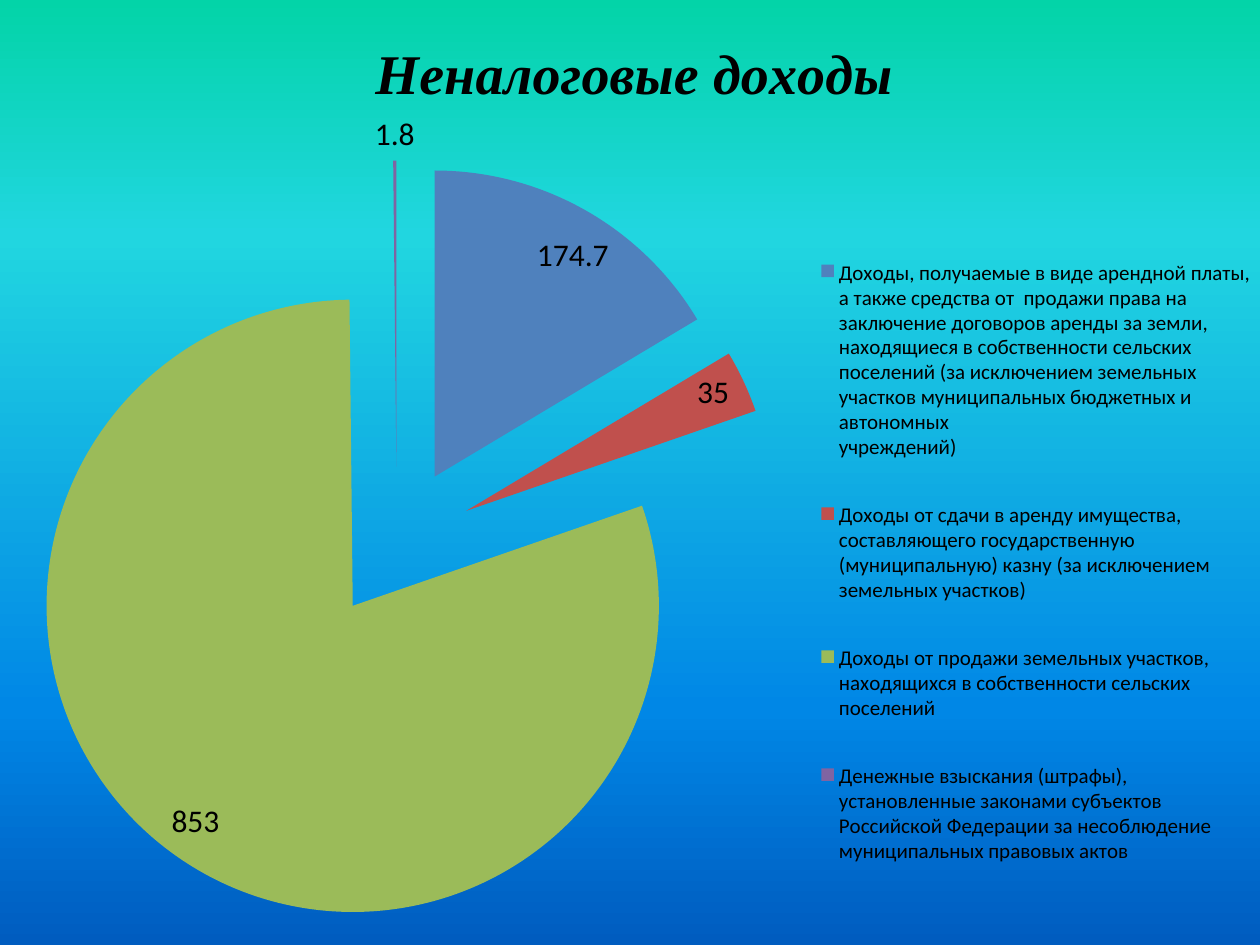
import pptx
import pptx.chart.data
import pptx.dml.color
import pptx.enum.chart
import pptx.oxml
import pptx.oxml.ns
import pptx.util
from pptx.util import Inches

COLORS = {
    "text": "000000",
    "rent": "4F81BD",
    "property": "C0504D",
    "land": "9BBB59",
    "fines": "8064A2",
}
BACKGROUND_STOPS = [(0, "03D4A8"), (25, "21D6E0"), (75, "0087E6"), (100, "005CBF")]
TITLE = "Неналоговые доходы"
INCOMES = [
    ("Доходы, получаемые в виде арендной платы, а также средства от  продажи права "
     "на заключение договоров аренды за земли, находящиеся в собственности сельских "
     "поселений (за исключением земельных участков муниципальных бюджетных и "
     "автономных\nучреждений)", 174.7, "rent"),
    ("Доходы от сдачи в аренду имущества, составляющего государственную "
     "(муниципальную) казну (за исключением земельных участков)", 35, "property"),
    ("Доходы от продажи земельных участков, находящихся в собственности сельских "
     "поселений", 853, "land"),
    ("Денежные взыскания (штрафы), установленные законами субъектов Российской "
     "Федерации за несоблюдение муниципальных правовых актов", 1.8, "fines"),
]
NAMESPACE = pptx.oxml.ns.nsdecls("c")


def style_font(font, size, name="Calibri"):
    font.size = pptx.util.Pt(size)
    font.name = name
    font.color.rgb = pptx.dml.color.RGBColor.from_string(COLORS["text"])


def place(element, previous_tag, target, **sizes):
    for old in element.findall(pptx.oxml.ns.qn("c:layout")):
        element.remove(old)
    parts = f'<c:layoutTarget val="{target}"/>' if target else ""
    parts += '<c:xMode val="edge"/><c:yMode val="edge"/>'
    parts += "".join(f'<c:{key} val="{value}"/>' for key, value in sizes.items())
    layout = pptx.oxml.parse_xml(
        f"<c:layout {NAMESPACE}><c:manualLayout>{parts}</c:manualLayout></c:layout>")
    previous = element.find(pptx.oxml.ns.qn(previous_tag)) if previous_tag else None
    if previous is None:
        element.insert(0, layout)
    else:
        previous.addnext(layout)


presentation = pptx.Presentation()
presentation.slide_width = Inches(10)
presentation.slide_height = Inches(7.5)
slide = presentation.slides.add_slide(presentation.slide_layouts[6])

fill = slide.background.fill
fill.gradient()
fill.gradient_angle = 270
stop_list = slide.element.find(".//" + pptx.oxml.ns.qn("a:gsLst"))
for stop in list(stop_list):
    stop_list.remove(stop)
for position, color in BACKGROUND_STOPS:
    stop_list.append(pptx.oxml.parse_xml(
        f'<a:gs {pptx.oxml.ns.nsdecls("a")} pos="{position * 1000}">'
        f'<a:srgbClr val="{color}"/></a:gs>'))

chart_data = pptx.chart.data.CategoryChartData()
chart_data.categories = [category for category, value, color in INCOMES]
chart_data.add_series(TITLE, [value for category, value, color in INCOMES])
chart = slide.shapes.add_chart(
    pptx.enum.chart.XL_CHART_TYPE.PIE, 0, 0, Inches(10), Inches(7.5), chart_data).chart
style_font(chart.font, 18)

chart.has_title = True
title_run = chart.chart_title.text_frame.paragraphs[0].add_run()
title_run.text = TITLE
style_font(title_run.font, 32, "Times New Roman")
title_run.font.bold = True
title_run.font.italic = True
chart.chart_title.include_in_layout = False
place(chart.chart_title._element, "c:tx", None, x=0.29, y=0.03)

plot = chart.plots[0]
plot.vary_by_categories = True
series = plot.series[0]
series._element.find(pptx.oxml.ns.qn("c:tx")).addnext(
    pptx.oxml.parse_xml(f'<c:explosion {NAMESPACE} val="25"/>'))
for index, (category, value, color) in enumerate(INCOMES):
    point_fill = series.points[index].format.fill
    point_fill.solid()
    point_fill.fore_color.rgb = pptx.dml.color.RGBColor.from_string(COLORS[color])
plot.has_data_labels = True
labels = plot.data_labels
labels.show_value = True
labels.show_percentage = False
labels.position = pptx.enum.chart.XL_LABEL_POSITION.BEST_FIT
style_font(labels.font, 18)
plot_area = chart._chartSpace.find(".//" + pptx.oxml.ns.qn("c:plotArea"))
place(plot_area, None, "inner", x=0.01, y=0.17, w=0.61, h=0.81)

chart.has_legend = True
legend = chart.legend
legend.position = pptx.enum.chart.XL_LEGEND_POSITION.RIGHT
legend.include_in_layout = False
style_font(legend.font, 12)
place(legend._element, "c:legendPos", None, x=0.65, y=0.23, w=0.35, h=0.73)

presentation.save("out.pptx")
